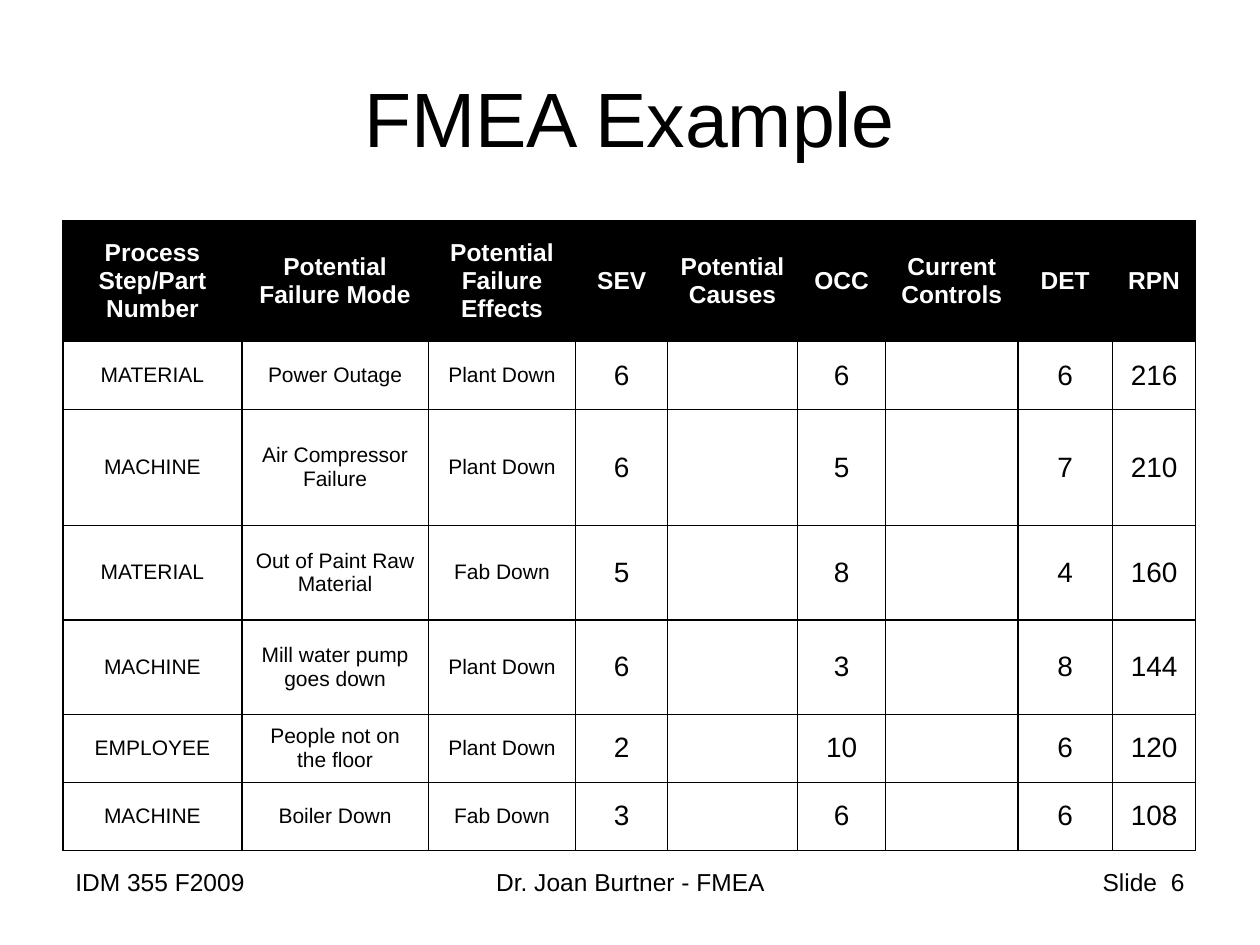
from dataclasses import dataclass

from lxml.etree import SubElement
from pptx import Presentation
from pptx.dml.color import RGBColor
from pptx.enum.text import MSO_ANCHOR, PP_ALIGN
from pptx.oxml.ns import qn
from pptx.util import Inches, Pt


@dataclass(frozen=True)
class Theme:
    font: str = "Arial"
    ink: str = "000000"
    paper: str = "FFFFFF"
    title_size: int = 44
    header_size: int = 14
    label_size: int = 12
    score_size: int = 16
    footer_size: int = 14
    border_width: int = 1


THEME = Theme()

COLUMN_WIDTHS = [1.42, 1.48, 1.17, 0.73, 1.03, 0.7, 1.05, 0.75, 0.66]
ROW_HEIGHTS = [0.96, 0.54, 0.92, 0.75, 0.75, 0.54, 0.54]
LABEL_COLUMNS = 3

HEADERS = [
    "Process Step/Part Number", "Potential Failure Mode",
    "Potential Failure Effects", "SEV", "Potential Causes", "OCC",
    "Current Controls", "DET", "RPN",
]

# Step, failure mode, effect, severity, occurrence, detection
FAILURES = [
    ("MATERIAL", "Power Outage", "Plant Down", 6, 6, 6),
    ("MACHINE", "Air Compressor Failure", "Plant Down", 6, 5, 7),
    ("MATERIAL", "Out of Paint Raw Material", "Fab Down", 5, 8, 4),
    ("MACHINE", "Mill water pump goes down", "Plant Down", 6, 3, 8),
    ("EMPLOYEE", "People not on the floor", "Plant Down", 2, 10, 6),
    ("MACHINE", "Boiler Down", "Fab Down", 3, 6, 6),
]

# Text, left, width, alignment
FOOTERS = [
    ("IDM 355 F2009", 0.5, 2.33, PP_ALIGN.LEFT),
    ("Dr. Joan Burtner - FMEA", 3.42, 3.17, PP_ALIGN.CENTER),
    ("Slide  6", 7.17, 2.33, PP_ALIGN.RIGHT),
]


def write_text(frame, text, size, color=THEME.ink, bold=False,
               align=PP_ALIGN.CENTER):
    para = frame.paragraphs[0]
    para.alignment = align
    span = para.add_run()
    span.text = text
    span.font.name = THEME.font
    span.font.size = Pt(size)
    span.font.bold = bold
    span.font.color.rgb = RGBColor.from_string(color)


def add_title(page, text):
    title = page.shapes.title
    title.left, title.top = Inches(0.5), Inches(0.3)
    title.width, title.height = Inches(9), Inches(1.25)
    title.text_frame.vertical_anchor = MSO_ANCHOR.MIDDLE
    write_text(title.text_frame, text, THEME.title_size)


def add_footer(page, text, left, width, align):
    box = page.shapes.add_textbox(
        Inches(left), Inches(6.83), Inches(width), Inches(0.52))
    box.text_frame.word_wrap = True
    write_text(box.text_frame, text, THEME.footer_size, align=align)


def set_borders(cell):
    properties = cell._tc.get_or_add_tcPr()
    for side in ("a:lnL", "a:lnR", "a:lnT", "a:lnB"):
        line = SubElement(properties, qn(side), w=str(Pt(THEME.border_width)))
        fill = SubElement(line, qn("a:solidFill"))
        SubElement(fill, qn("a:srgbClr"), val=THEME.ink)


def fill_cell(cell, text, background, **text_format):
    set_borders(cell)
    cell.fill.solid()
    cell.fill.fore_color.rgb = RGBColor.from_string(background)
    cell.vertical_anchor = MSO_ANCHOR.MIDDLE
    if text:
        write_text(cell.text_frame, text, **text_format)


def failure_row(step, mode, effect, severity, occurrence, detection):
    # The risk priority number is the product of the three scores
    priority = severity * occurrence * detection
    return [step, mode, effect, str(severity), "", str(occurrence), "",
            str(detection), str(priority)]


def add_failure_table(page):
    table = page.shapes.add_table(
        len(ROW_HEIGHTS), len(COLUMN_WIDTHS),
        Inches(0.5), Inches(1.75), Inches(9), Inches(5)).table
    for column, width in zip(table.columns, COLUMN_WIDTHS):
        column.width = Inches(width)
    for row, height in zip(table.rows, ROW_HEIGHTS):
        row.height = Inches(height)

    # Header row
    for index, text in enumerate(HEADERS):
        fill_cell(table.cell(0, index), text, THEME.ink,
                  size=THEME.header_size, color=THEME.paper, bold=True)

    # One row for each failure
    for row_index, failure in enumerate(FAILURES, start=1):
        for index, text in enumerate(failure_row(*failure)):
            size = (THEME.label_size if index < LABEL_COLUMNS
                    else THEME.score_size)
            fill_cell(table.cell(row_index, index), text, THEME.paper,
                      size=size)


def main():
    deck = Presentation()
    deck.slide_width, deck.slide_height = Inches(10), Inches(7.5)
    page = deck.slides.add_slide(deck.slide_layouts[5])

    for footer in FOOTERS:
        add_footer(page, *footer)
    add_title(page, "FMEA Example")
    add_failure_table(page)

    deck.save("out.pptx")


if __name__ == "__main__":
    main()
